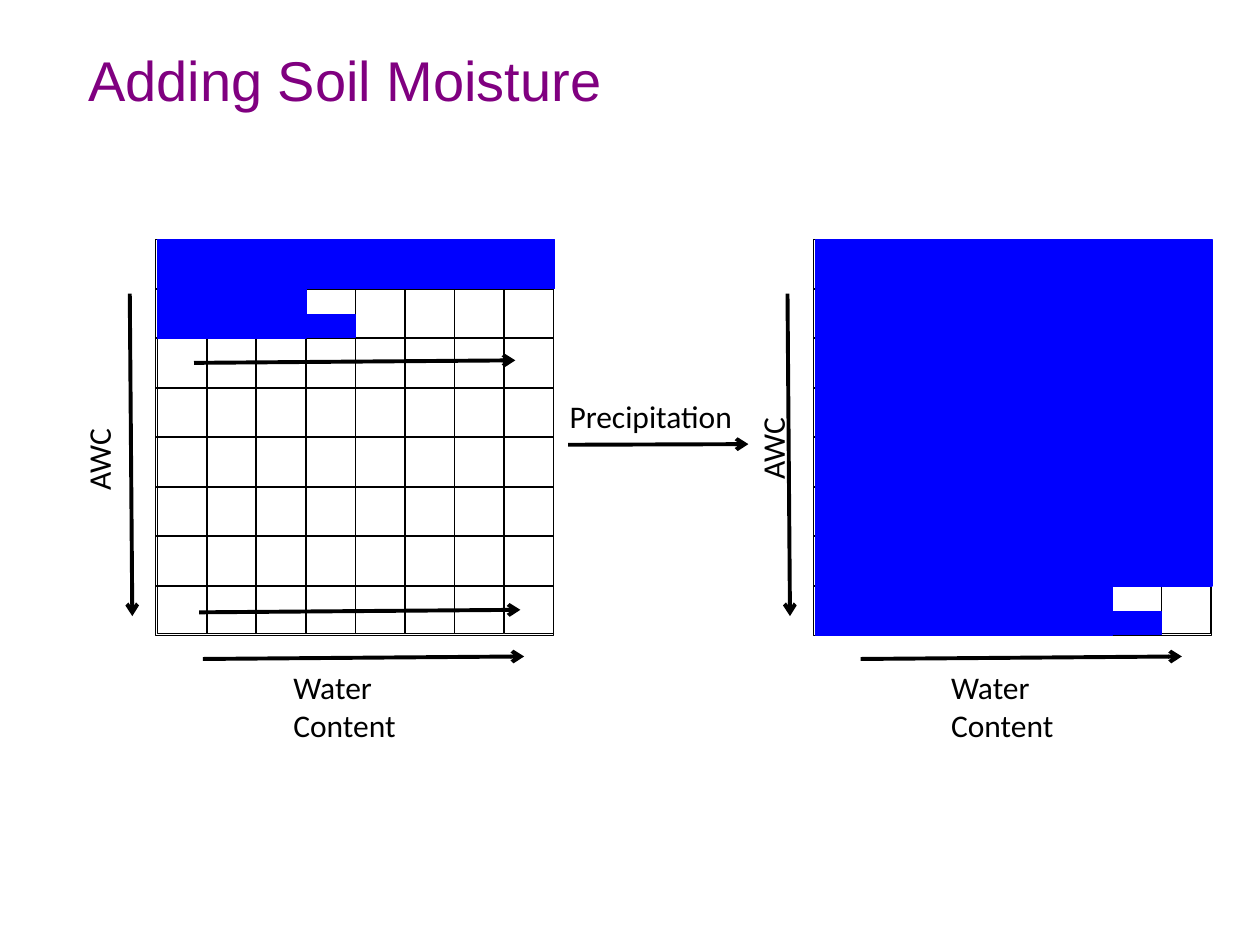
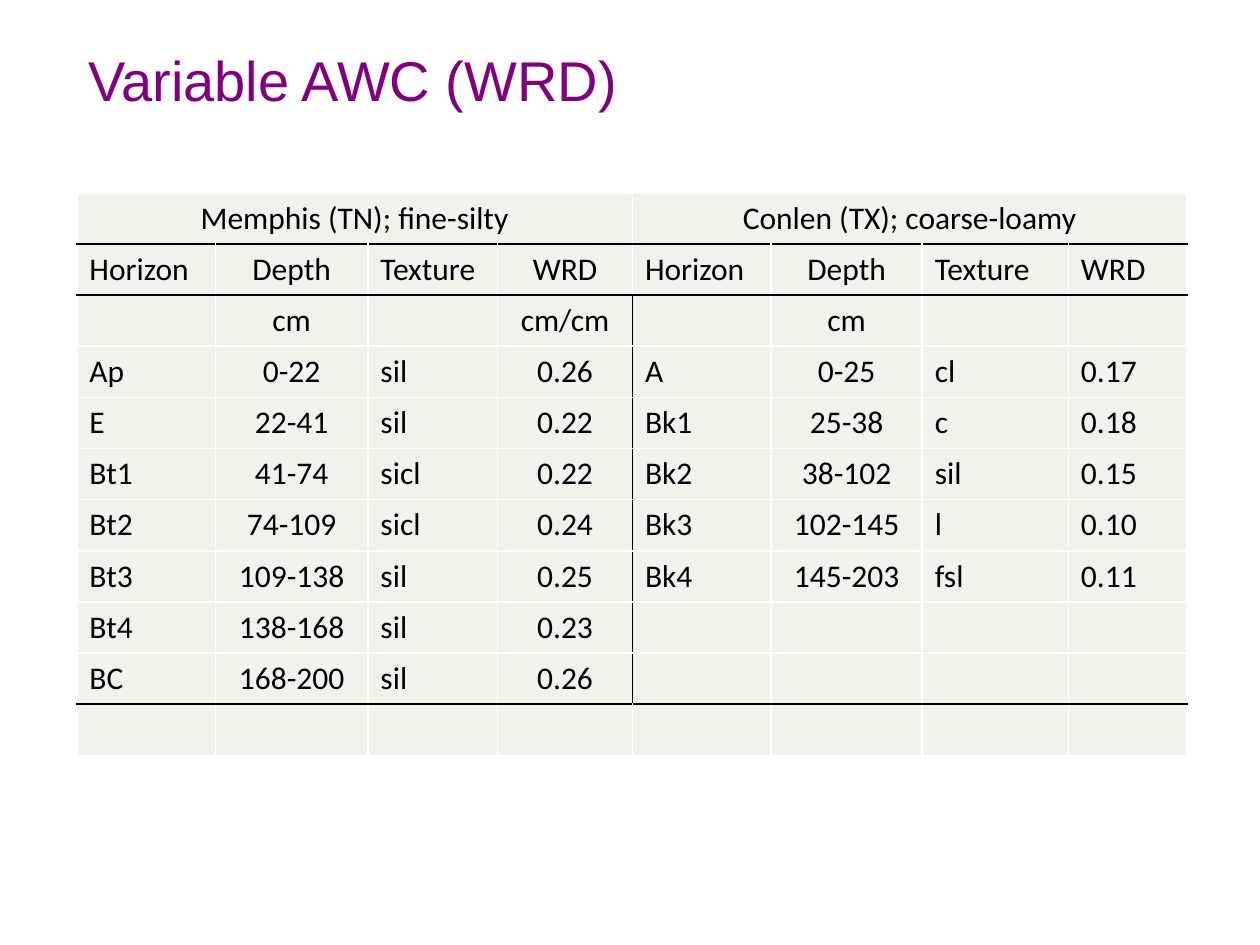
from lxml.etree import SubElement
from pptx import Presentation
from pptx.dml.color import RGBColor as Rgb
from pptx.enum.shapes import MSO_CONNECTOR as Connector, MSO_SHAPE as Shape
from pptx.enum.text import MSO_ANCHOR as Anchor, PP_ALIGN as Align
from pptx.oxml.ns import qn
from pptx.util import Inches, Pt

COLORS = {"title": "800080", "ink": "000000", "water": "0000FF", "cell": "EFF3EA", "rule": "FFFFFF"}
FORMATS = {
    "title": {"name": "Arial", "size": Pt(32)},
    "body": {"name": "Calibri", "size": Pt(18)},
}
GRID_COLUMNS = 100
CELLS = 8
PITCH = 3.93
PANEL_TOP = 19
PANEL_SIZE = 31.5

HORIZONS = [
    ["Memphis (TN); fine-silty", "", "", "", "Conlen (TX); coarse-loamy", "", "", ""],
    ["Horizon", "Depth", "Texture", "WRD"] * 2,
    ["", "cm", "", "cm/cm", "", "cm", "", ""],
    ["Ap", "0-22", "sil", "0.26", "A", "0-25", "cl", "0.17"],
    ["E", "22-41", "sil", "0.22", "Bk1", "25-38", "c", "0.18"],
    ["Bt1", "41-74", "sicl", "0.22", "Bk2", "38-102", "sil", "0.15"],
    ["Bt2", "74-109", "sicl", "0.24", "Bk3", "102-145", "l", "0.10"],
    ["Bt3", "109-138", "sil", "0.25", "Bk4", "145-203", "fsl", "0.11"],
    ["Bt4", "138-168", "sil", "0.23", "", "", "", ""],
    ["BC", "168-200", "sil", "0.26", "", "", "", ""],
    [""] * 8,
]
COLUMN_WIDTHS = [11, 12.1, 10.3, 10.7, 11, 12, 11.6, 9.4]
CENTERED_COLUMNS = {1, 3, 5}
BLACK_ROW_EDGES = {1, 2, 10}
SOIL_EDGE = 4
SOIL_ROWS = range(2, 10)


class SoilDeck:
    def __init__(self):
        self.deck = Presentation()
        self.deck.slide_width, self.deck.slide_height = Inches(10), Inches(7.5)
        self.unit = self.deck.slide_width / GRID_COLUMNS
        self.slide = None

    def place(self, *lengths):
        return [round(length * self.unit) for length in lengths]

    def page(self, title):
        self.slide = self.deck.slides.add_slide(self.deck.slide_layouts[6])
        self.text(title, (6, 3.5, 87.9, 5.6), "title", "title", anchor=Anchor.MIDDLE)

    def set_words(self, para, words, style="body", color="ink", align=Align.LEFT):
        para.alignment = align
        if words:
            span = para.add_run()
            span.text = words
            for name, value in FORMATS[style].items():
                setattr(span.font, name, value)
            span.font.color.rgb = Rgb.from_string(COLORS[color])

    def text(self, words, area, style="body", color="ink", align=Align.LEFT,
             anchor=Anchor.TOP, wrap=True, rotation=0):
        box = self.slide.shapes.add_textbox(*self.place(*area))
        box.rotation = rotation
        box.text_frame.word_wrap = wrap
        box.text_frame.vertical_anchor = anchor
        self.set_words(box.text_frame.paragraphs[0], words, style, color, align)

    def rectangle(self, area, line, fill=None, parent=None):
        shapes = (parent or self.slide).shapes
        box = shapes.add_shape(Shape.RECTANGLE, *self.place(*area))
        box.shadow.inherit = False
        if fill:
            box.fill.solid()
            box.fill.fore_color.rgb = Rgb.from_string(COLORS[fill])
        else:
            box.fill.background()
        box.line.color.rgb = Rgb.from_string(COLORS[line])
        box.line.width = Pt(0.75)

    def arrow(self, *ends):
        arrow = self.slide.shapes.add_connector(Connector.STRAIGHT, *self.place(*ends))
        arrow.line.color.rgb = Rgb.from_string(COLORS["ink"])
        arrow.line.width = Pt(2.25)
        properties = arrow._element.spPr
        SubElement(properties.find(qn("a:ln")), qn("a:tailEnd"), type="arrow")
        SubElement(properties, qn("a:effectLst"))

    def soil_panel(self, left, full_rows, full_cells, inner_arrows=()):
        strips = self.slide.shapes.add_group_shape()
        for index in range(CELLS):
            step = index * PITCH
            self.rectangle((left + step, PANEL_TOP + 0.1, 3.9, 31.2), "ink", parent=strips)
        for index in range(CELLS):
            step = index * PITCH
            self.rectangle((left - 0.15, PANEL_TOP + step, 31.6, 3.9), "ink", parent=strips)
        self.arrow(left + 3.6, 52.3, left + 29.1, 52.1)
        self.text("Water Content", (left + 9.8, 52.5, 13.7, 3.1))
        self.arrow(left - 2.2, 23.3, left - 2, 48.9)
        for start, height in inner_arrows:
            self.arrow(left + start, height, left + start + 25.5, height - 0.2)
        filled = full_rows * PITCH
        partial_top = PANEL_TOP + filled
        wet_width = full_cells * PITCH
        for area in (
            (left, PANEL_TOP, PANEL_SIZE, filled),
            (left, partial_top, wet_width, 3.9),
            (left + wet_width, partial_top + 2.05, 3.9, 1.8),
        ):
            self.rectangle(area, "water", "water")

    def border(self, cell, edges):
        properties = cell._tc.get_or_add_tcPr()
        for side, color in edges.items():
            line = SubElement(properties, qn(f"a:ln{side}"), w=str(Pt(1)))
            SubElement(SubElement(line, qn("a:solidFill")), qn("a:srgbClr"), val=COLORS[color])

    def table(self, rows, widths, left, top, row_height):
        area = self.place(left, top, sum(widths), row_height * len(rows))
        table = self.slide.shapes.add_table(len(rows), len(widths), *area).table
        table.first_row = table.horz_banding = False
        for column, width in zip(table.columns, self.place(*widths)):
            column.width = width
        for row, values in enumerate(rows):
            table.rows[row].height = self.place(row_height)[0]
            for column, words in enumerate(values):
                cell = table.cell(row, column)
                centered = row == 0 or column in CENTERED_COLUMNS
                self.set_words(cell.text_frame.paragraphs[0], words,
                               align=Align.CENTER if centered else Align.LEFT)
                black = {
                    "L": column == SOIL_EDGE and row in SOIL_ROWS,
                    "R": column + 1 == SOIL_EDGE and row in SOIL_ROWS,
                    "T": row in BLACK_ROW_EDGES,
                    "B": row + 1 in BLACK_ROW_EDGES,
                }
                self.border(cell, {side: "ink" if dark else "rule" for side, dark in black.items()})
                cell.fill.solid()
                cell.fill.fore_color.rgb = Rgb.from_string(COLORS["cell"])
        for start in (0, SOIL_EDGE):
            table.cell(0, start).merge(table.cell(0, start + 3))
        table.cell(0, SOIL_EDGE).vertical_anchor = Anchor.BOTTOM


def main():
    soil = SoilDeck()
    soil.page("Adding Soil Moisture")
    soil.soil_panel(12.5, 1, 3, inner_arrows=[(2.9, 28.8), (3.3, 48.6)])
    soil.soil_panel(64.7, 7, 6)
    soil.arrow(45.1, 35.3, 59.4, 35.25)
    soil.text("Precipitation", (44.1, 31, 15.1, 4), align=Align.CENTER, wrap=False)
    for left, top in ((57.2, 32.9), (3.7, 33.8)):
        soil.text("AWC", (left, top, 8.2, 4), rotation=270)

    soil.page("Variable AWC (WRD)")
    soil.table(HORIZONS, COLUMN_WIDTHS, 6.1, 15.3, 4.06)
    soil.deck.save("out.pptx")


if __name__ == "__main__":
    main()
